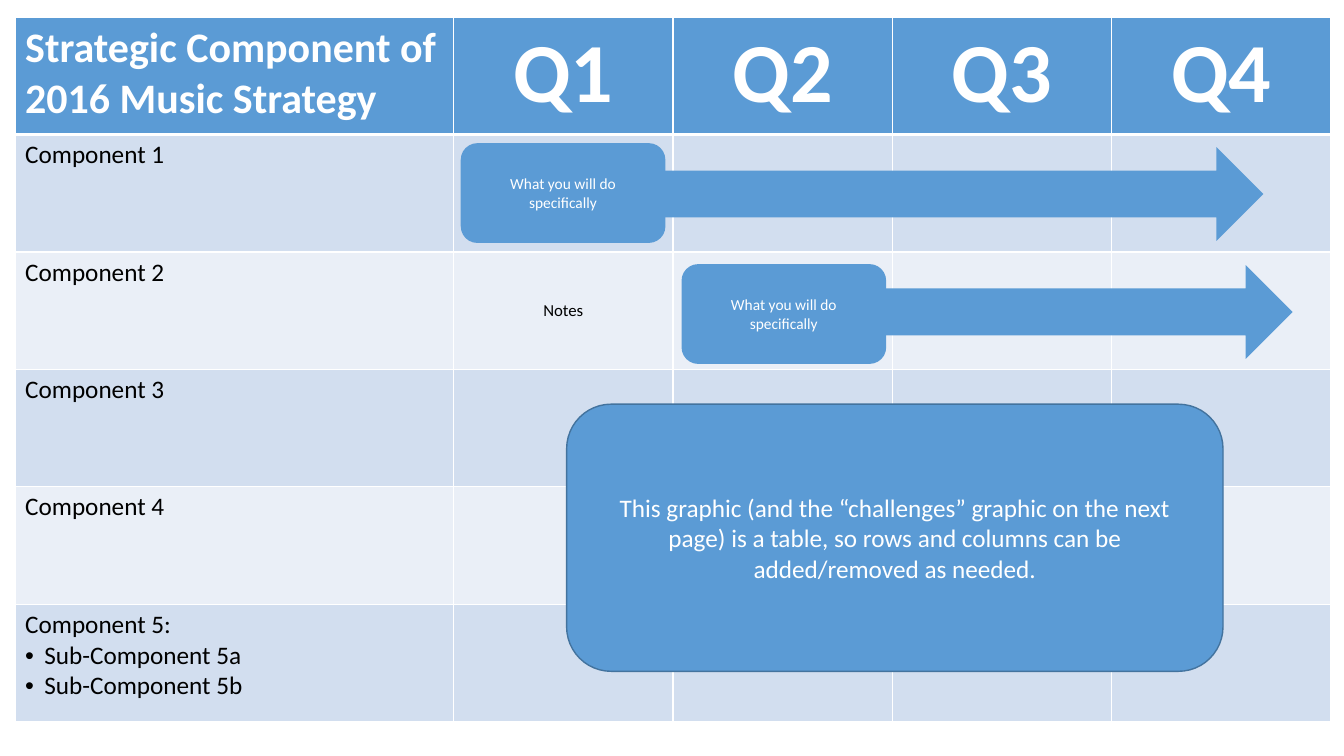
from lxml.etree import SubElement
from pptx import Presentation
from pptx.dml.color import RGBColor
from pptx.enum.shapes import MSO_SHAPE as SHAPE
from pptx.enum.text import MSO_ANCHOR as ANCHOR, PP_ALIGN as ALIGN
from pptx.oxml.ns import qn
from pptx.util import Inches, Pt

COLORS = {"blue": "5B9BD5", "outline": "43739E", "odd": "D2DEEF",
          "even": "EAEFF7", "white": "FFFFFF", "black": "000000"}
QUARTERS = ["Q1", "Q2", "Q3", "Q4"]
COMPONENTS = [
    ["Component 1"],
    ["Component 2"],
    ["Component 3"],
    ["Component 4"],
    ["Component 5:", "Sub-Component 5a", "Sub-Component 5b"],
]
LABEL_WIDTH, QUARTER_WIDTH, ROW_HEIGHT = 4.35, 2.175, 1.165
TASK = "What you will do specifically"
ADVICE = ("This graphic (and the “challenges” graphic on the next page) is a table, "
          "so rows and columns can be added/removed as needed.")


def rgb(name):
    return RGBColor.from_string(COLORS[name])


def paint(target, color):
    target.fill.solid()
    target.fill.fore_color.rgb = rgb(color)


def write(p, text, size, color, bold=False, align=ALIGN.LEFT):
    p.alignment = align
    r = p.add_run()
    r.text = text
    for key, value in {"name": "Calibri", "size": Pt(size), "bold": bold}.items():
        setattr(r.font, key, value)
    r.font.color.rgb = rgb(color)


def add_bullet(p):
    pPr = p._p.get_or_add_pPr()
    indent = Inches(0.19)
    pPr.set("marL", str(indent))
    pPr.set("indent", str(-indent))
    SubElement(pPr, qn("a:buFont")).set("typeface", "Arial")
    SubElement(pPr, qn("a:buChar")).set("char", "•")


def add_borders(cell, top, bottom):
    tcPr = cell._tc.get_or_add_tcPr()
    for side, width in {"L": 1, "R": 1, "T": top, "B": bottom}.items():
        ln = SubElement(tcPr, qn(f"a:ln{side}"), w=str(Pt(width)))
        fill = SubElement(ln, qn("a:solidFill"))
        SubElement(fill, qn("a:srgbClr")).set("val", COLORS["white"])


def format_row(row, index):
    row.height = Inches(ROW_HEIGHT)
    color = "blue" if index == 0 else "odd" if index % 2 else "even"
    for cell in row.cells:
        add_borders(cell, 3 if index == 1 else 1, 3 if index == 0 else 1)
        paint(cell, color)


def add_plan(s):
    width = LABEL_WIDTH + QUARTER_WIDTH * len(QUARTERS)
    rows = len(COMPONENTS) + 1
    table = s.shapes.add_table(rows, len(QUARTERS) + 1, Inches(0.15), Inches(0.17),
                               Inches(width), Inches(ROW_HEIGHT * rows)).table
    for i, column in enumerate(table.columns):
        column.width = Inches(QUARTER_WIDTH if i else LABEL_WIDTH)
    for i, row in enumerate(table.rows):
        format_row(row, i)

    write(table.cell(0, 0).text_frame.paragraphs[0],
          "Strategic Component of 2016 Music Strategy", 30, "white", True)
    for i, quarter in enumerate(QUARTERS, 1):
        write(table.cell(0, i).text_frame.paragraphs[0],
              quarter, 60, "white", True, ALIGN.CENTER)
    for i, lines in enumerate(COMPONENTS, 1):
        tf = table.cell(i, 0).text_frame
        for j, line in enumerate(lines):
            p = tf.add_paragraph() if j else tf.paragraphs[0]
            write(p, line, 18, "black")
            if j:
                add_bullet(p)
    notes = table.cell(2, 1)
    notes.vertical_anchor = ANCHOR.MIDDLE
    write(notes.text_frame.paragraphs[0], "Notes", 12, "black", align=ALIGN.CENTER)


def add_block(s, kind, box, text="", size=11, outline=None):
    sp = s.shapes.add_shape(kind, *map(Inches, box))
    sp.shadow.inherit = False
    paint(sp, "blue")
    if outline:
        sp.line.color.rgb = rgb(outline)
        sp.line.width = Pt(1)
    else:
        sp.line.fill.background()
    if text:
        tf = sp.text_frame
        tf.word_wrap = True
        tf.vertical_anchor = ANCHOR.MIDDLE
        write(tf.paragraphs[0], text, size, "white", align=ALIGN.CENTER)


def add_task(s, left, top, arrow_box):
    add_block(s, SHAPE.ROUNDED_RECTANGLE, (left, top, 2.03, 0.99), TASK)
    add_block(s, SHAPE.RIGHT_ARROW, arrow_box)


def main():
    prs = Presentation()
    prs.slide_width, prs.slide_height = Inches(13.33), Inches(7.5)
    s = prs.slides.add_slide(prs.slide_layouts[6])
    add_plan(s)
    add_task(s, 4.57, 1.42, (6.54, 1.46, 5.99, 0.93))
    add_task(s, 6.76, 2.62, (8.77, 2.63, 4.05, 0.93))
    add_block(s, SHAPE.ROUNDED_RECTANGLE, (5.62, 4.01, 6.51, 2.65), ADVICE, 18, "outline")
    prs.save("out.pptx")


if __name__ == "__main__":
    main()
